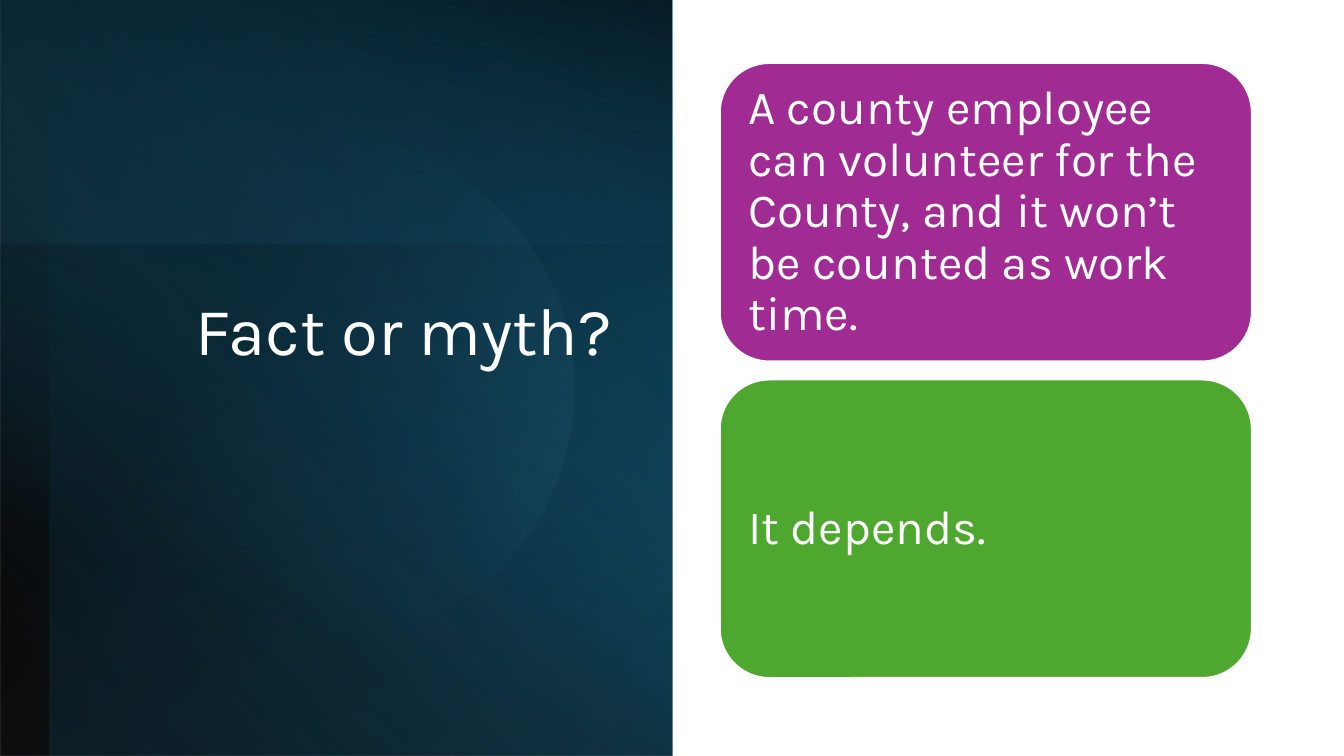
from dataclasses import dataclass

from lxml import etree
from pptx import Presentation
from pptx import util as u
from pptx.dml.color import RGBColor
from pptx.enum import shapes, text
from pptx.oxml import ns


@dataclass(frozen=True)
class Theme:
    """Colours, font and type sizes of the slide."""
    font: str = "Karla"
    title_size: int = 48
    card_size: int = 34
    white: str = "FFFFFF"
    black: str = "000000"
    teal: str = "156082"
    navy: str = "0B3041"
    sky: str = "83CBEB"
    purple: str = "A02B93"
    green: str = "4EA72E"


THEME = Theme()
WIDTH, HEIGHT = u.Inches(13.333), u.Inches(7.5)


def area(left, top, width, height):
    """Turn percentages of the slide's size into lengths."""
    return [round(share * side / 100) for share, side in
            zip((left, top, width, height), (WIDTH, HEIGHT, WIDTH, HEIGHT))]


def set_gradient(shape, stops, angle):
    """Fill a shape with (position, colour, opacity) stops in percent."""
    shape.fill.background()
    properties = shape._element.spPr
    gradient = etree.Element(ns.qn("a:gradFill"), rotWithShape="1")
    stop_list = etree.SubElement(gradient, ns.qn("a:gsLst"))
    for position, colour, opacity in stops:
        stop = etree.SubElement(stop_list, ns.qn("a:gs"), pos=str(position * 1000))
        shade = etree.SubElement(stop, ns.qn("a:srgbClr"), val=colour)
        etree.SubElement(shade, ns.qn("a:alpha"), val=str(opacity * 1000))
    etree.SubElement(gradient, ns.qn("a:lin"), ang=str(angle * 60000), scaled="0")
    properties.replace(properties.find(ns.qn("a:noFill")), gradient)


def add_glow(slide, kind, box, rotation, flipped, stops, angle):
    """Add one translucent layer of the dark panel."""
    shape = slide.shapes.add_shape(kind, *area(*box))
    shape.shadow.inherit = False
    shape.line.fill.background()
    shape.rotation = rotation
    if flipped:
        shape._element.spPr.xfrm.set("flipH", "1")
    set_gradient(shape, stops, angle)


def write(shape, words, size, **frame_format):
    """Write one white paragraph into a shape's text frame."""
    frame = shape.text_frame
    for name, value in {"word_wrap": True, **frame_format}.items():
        setattr(frame, name, value)
    paragraph = frame.paragraphs[0]
    paragraph.line_spacing = 0.9
    run = paragraph.add_run()
    run.text = words
    for name, value in {"name": THEME.font, "size": u.Pt(size)}.items():
        setattr(run.font, name, value)
    run.font.color.rgb = RGBColor.from_string(THEME.white)
    return paragraph


def add_title(slide, words):
    """Add the right-aligned title on the dark panel."""
    box = slide.shapes.add_textbox(*area(8.78, 38.67, 37.5, 46.93))
    paragraph = write(box, words, THEME.title_size,
                      vertical_anchor=text.MSO_ANCHOR.TOP)
    paragraph.alignment = text.PP_ALIGN.RIGHT


def add_card(slide, row, words, colour):
    """Add a rounded statement card in the given row."""
    card = slide.shapes.add_shape(shapes.MSO_SHAPE.ROUNDED_RECTANGLE,
                                  *area(53.55, 8.32 + row * 41.87, 39.6, 39.5))
    card.shadow.inherit = False
    card.fill.solid()
    card.fill.fore_color.rgb = RGBColor.from_string(colour)
    card.line.color.rgb = RGBColor.from_string(THEME.white)
    card.line.width = u.Pt(1.5)
    sides = ("left", "top", "right", "bottom")
    margins = {f"margin_{side}": u.Inches(0.14) for side in sides}
    paragraph = write(card, words, THEME.card_size,
                      vertical_anchor=text.MSO_ANCHOR.MIDDLE, **margins)
    paragraph.alignment = text.PP_ALIGN.LEFT


def main():
    """Build the slide and save it."""
    presentation = Presentation()
    presentation.slide_width, presentation.slide_height = WIDTH, HEIGHT
    slide = presentation.slides.add_slide(presentation.slide_layouts[6])
    black, teal = THEME.black, THEME.teal
    rectangle, oval = shapes.MSO_SHAPE.RECTANGLE, shapes.MSO_SHAPE.OVAL
    glows = [
        (rectangle, (0, 0, 50, 100), 180, True,
         [(8, black, 94), (100, teal, 100)], 40),
        (rectangle, (-1.28, 8.93, 56.25, 82.27), 270, True,
         [(0, teal, 23), (71, THEME.navy, 0), (100, black, 0)], 140),
        (rectangle, (-0.08, 32.4, 50, 67.6), 180, True,
         [(0, teal, 0), (72, black, 21)], 140),
        (oval, (4.65, 17.6, 38.03, 67.6), 69, False,
         [(53, teal, 0), (100, THEME.sky, 15)], 280),
        (rectangle, (-0.08, 0, 50, 100.13), 180, True,
         [(24, teal, 0), (100, black, 71)], 70),
    ]
    for glow in glows:
        add_glow(slide, *glow)
    add_title(slide, "Fact or myth?")
    cards = [
        ("A county employee can volunteer for the County, "
         "and it won’t be counted as work time.", THEME.purple),
        ("It depends.", THEME.green),
    ]
    for row, (words, colour) in enumerate(cards):
        add_card(slide, row, words, colour)
    presentation.save("out.pptx")


if __name__ == "__main__":
    main()
